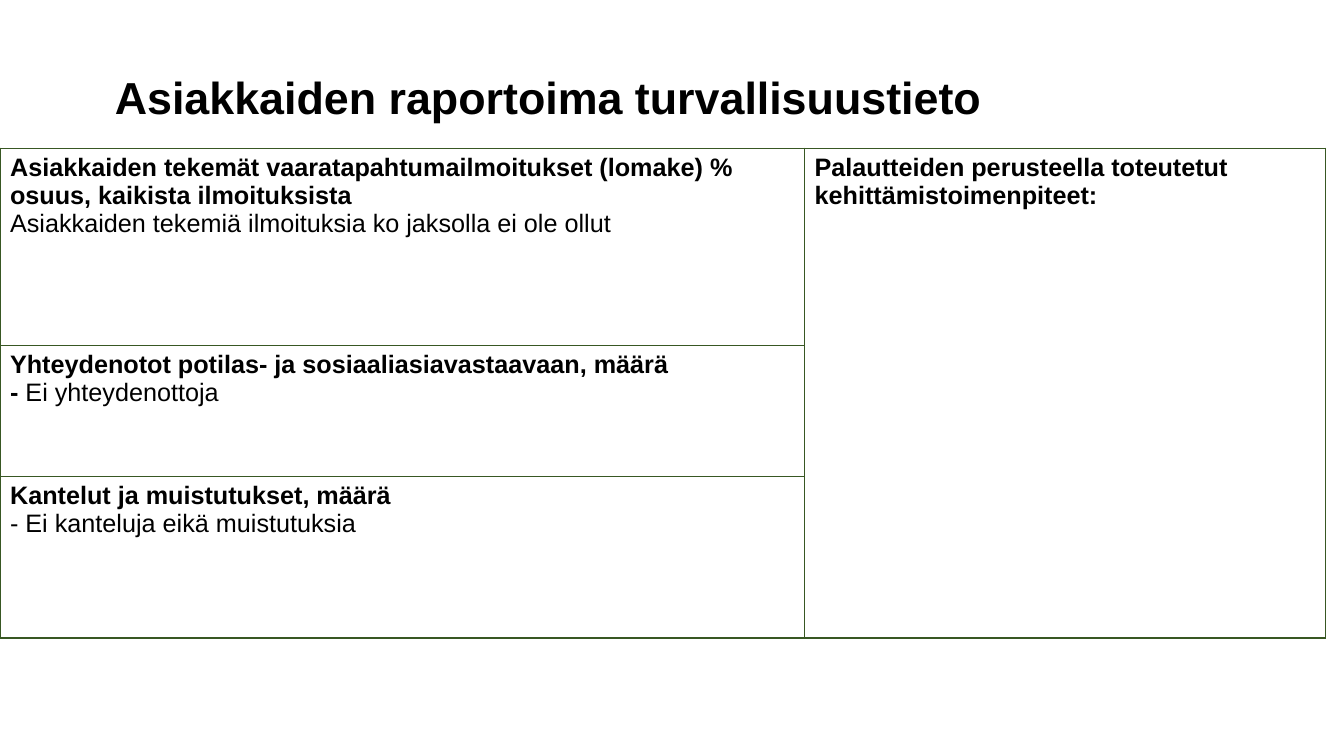
from lxml import etree
from pptx import Presentation
from pptx import util as u
from pptx.dml.color import RGBColor
from pptx.enum import text
from pptx.oxml.ns import qn

WIDTH, HEIGHT = 13.33, 7.5
INK, PAPER, BORDER = "000000", "FFFFFF", "385723"
COLUMNS = [7.98, 5.17]
ROWS = [1.96, 1.3, 1.6]
TITLE = "Asiakkaiden raportoima turvallisuustieto"
REPORTS = [
    [("Asiakkaiden tekemät vaaratapahtumailmoitukset (lomake) % osuus, kaikista ilmoituksista", True)],
    [("Asiakkaiden tekemiä ilmoituksia ko jaksolla ei ole ollut", False)],
]
CONTACTS = [
    [("Yhteydenotot potilas- ja sosiaaliasiavastaavaan, määrä", True)],
    [("- ", True), ("Ei yhteydenottoja", False)],
]
COMPLAINTS = [
    [("Kantelut ja muistutukset, määrä", True)],
    [("- Ei kanteluja eikä muistutuksia", False)],
]
ACTIONS = [[("Palautteiden perusteella toteutetut kehittämistoimenpiteet:", True)]]


def color(value):
    """Return the colour for a hex string."""
    return RGBColor.from_string(value)


def style(font, size):
    """Set the face, size and ink of a font."""
    font.name = "Arial"
    font.size = u.Pt(size)
    font.color.rgb = color(INK)


def write(frame, paragraphs, size):
    """Fill a text frame with paragraphs of (words, bold) spans."""
    for index, spans in enumerate(paragraphs):
        para = frame.add_paragraph() if index else frame.paragraphs[0]
        style(para.font, size)
        if len(spans) == 1:
            para.font.bold = spans[0][1]
        for words, bold in spans:
            span = para.add_run()
            span.text = words
            if len(spans) > 1:
                span.font.bold = bold


def dress(cell):
    """Give a cell thin green borders and a white fill."""
    properties = cell._tc.get_or_add_tcPr()
    for side in ("lnL", "lnR", "lnT", "lnB"):
        line = etree.SubElement(properties, qn(f"a:{side}"), w=str(u.Pt(1)))
        fill = etree.SubElement(line, qn("a:solidFill"))
        etree.SubElement(fill, qn("a:srgbClr"), val=BORDER)
    cell.fill.solid()
    cell.fill.fore_color.rgb = color(PAPER)


def add_title(page, left, top, width, height):
    """Place the heading in the given box."""
    box = page.shapes.add_textbox(*map(u.Inches, (left, top, width, height)))
    frame = box.text_frame
    frame.word_wrap = True
    frame.vertical_anchor = text.MSO_ANCHOR.MIDDLE
    write(frame, [[(TITLE, True)]], 32)
    frame.paragraphs[0].line_spacing = 0.9


def add_report_table(page, left, top):
    """Place the safety table with its right column merged over all rows."""
    area = map(u.Inches, (left, top, sum(COLUMNS), sum(ROWS)))
    table = page.shapes.add_table(len(ROWS), len(COLUMNS), *area).table
    table.first_row = table.horz_banding = False
    for column, width in zip(table.columns, COLUMNS):
        column.width = u.Inches(width)
    for row, height in zip(table.rows, ROWS):
        row.height = u.Inches(height)
    for cell in table.iter_cells():
        dress(cell)
    table.cell(0, 1).merge(table.cell(len(ROWS) - 1, 1))
    for index, content in enumerate((REPORTS, CONTACTS, COMPLAINTS)):
        write(table.cell(index, 0).text_frame, content, 18)
    write(table.cell(0, 1).text_frame, ACTIONS, 18)


def main():
    """Build and save the deck."""
    deck = Presentation()
    deck.slide_width, deck.slide_height = u.Inches(WIDTH), u.Inches(HEIGHT)
    page = deck.slides.add_slide(deck.slide_layouts[6])
    add_title(page, 1.04, 0.27, 10.11, 1.45)
    add_report_table(page, 0, 1.47)
    deck.save("out.pptx")


if __name__ == "__main__":
    main()
